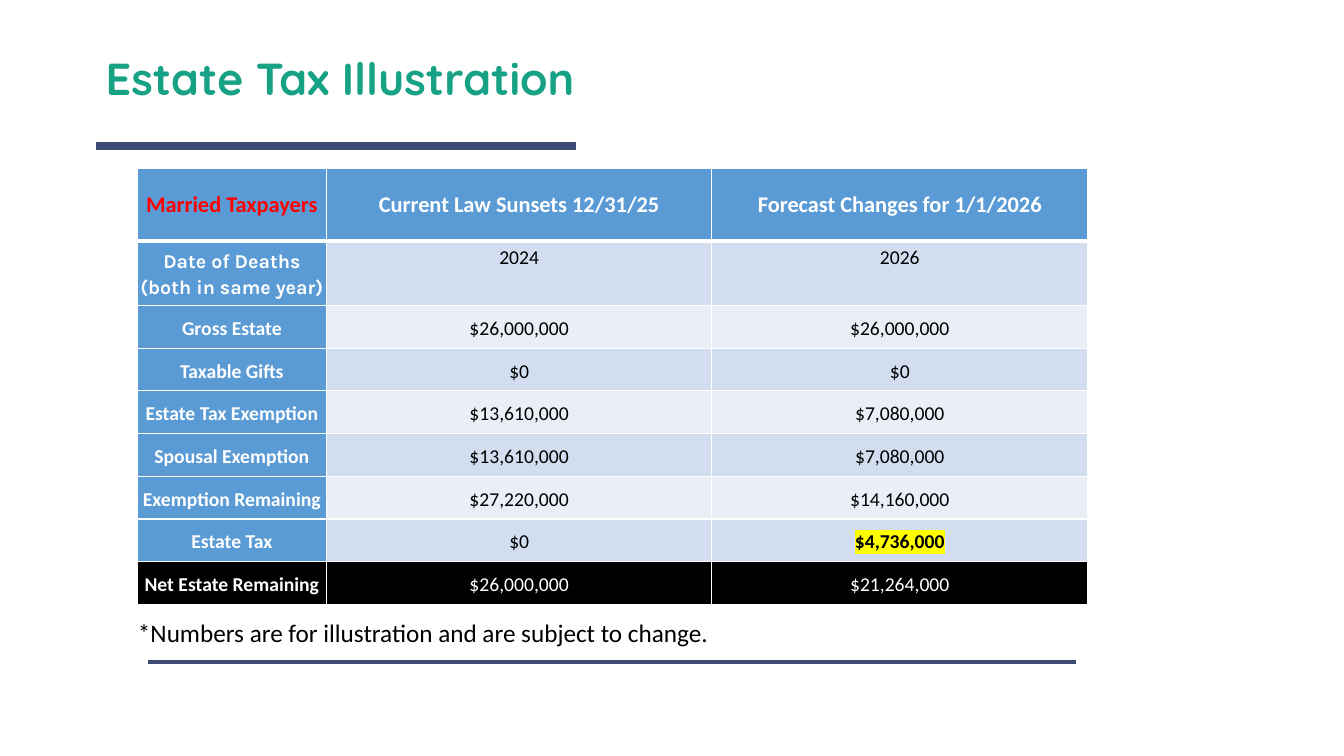
from lxml import etree
from pptx import Presentation
from pptx.dml.color import RGBColor
from pptx.enum.shapes import MSO_CONNECTOR
from pptx.enum.text import MSO_ANCHOR, PP_ALIGN
from pptx.oxml.ns import qn
from pptx.util import Inches, Pt

STRAIGHT = MSO_CONNECTOR.STRAIGHT
TOP, MIDDLE = MSO_ANCHOR.TOP, MSO_ANCHOR.MIDDLE
LEFT, CENTER = PP_ALIGN.LEFT, PP_ALIGN.CENTER

COLORS = {
    "title": "17A185", "rule": "3F4A75", "header": "5B9BD5", "red": "FF0000",
    "odd": "D2DEEF", "even": "EAEFF7", "black": "000000", "white": "FFFFFF",
    "yellow": "FFFF00",
}
HEADINGS = ["Married Taxpayers", "Current Law Sunsets 12/31/25",
            "Forecast Changes for 1/1/2026"]
ROWS = [
    ["Date of Deaths (both in same year)", "2024", "2026"],
    ["Gross Estate", "$26,000,000", "$26,000,000"],
    ["Taxable Gifts", "$0", "$0"],
    ["Estate Tax Exemption", "$13,610,000", "$7,080,000"],
    ["Spousal Exemption", "$13,610,000", "$7,080,000"],
    ["Exemption Remaining", "$27,220,000", "$14,160,000"],
    ["Estate Tax", "$0", "$4,736,000"],
    ["Net Estate Remaining", "$26,000,000", "$21,264,000"],
]
COL_WIDTHS = [1.88, 3.82, 3.73]
TABLE_HEIGHT, HEADER_HEIGHT, DEATHS_HEIGHT = 4.33, 0.72, 0.64


def rgb(name):
    """Return the named colour."""
    return RGBColor.from_string(COLORS[name])


def write(tf, text, size=14, font="Calibri", color="black", bold=False,
          align=LEFT, spacing=1.0, highlight=None):
    """Write one formatted paragraph into a text frame."""
    p = tf.paragraphs[0]
    p.alignment, p.line_spacing = align, spacing
    r = p.add_run()
    r.text = text
    r.font.size, r.font.bold = Pt(size), bold
    r.font.color.rgb = rgb(color)
    r.font.name = font
    if highlight:
        hl = etree.Element(qn("a:highlight"))
        etree.SubElement(hl, qn("a:srgbClr"), val=COLORS[highlight])
        r.font._element.find(qn("a:latin")).addprevious(hl)


def add_text(slide, text, x, y, w, h, anchor=TOP, **fmt):
    """Add a wrapping text box."""
    tf = slide.shapes.add_textbox(Inches(x), Inches(y), Inches(w), Inches(h)).text_frame
    tf.word_wrap, tf.vertical_anchor = True, anchor
    write(tf, text, **fmt)


def add_rule(slide, x1, x2, y, width):
    """Add a horizontal line without a shadow."""
    line = slide.shapes.add_connector(STRAIGHT, Inches(x1), Inches(y), Inches(x2), Inches(y))
    line.line.color.rgb, line.line.width = rgb("rule"), Pt(width)
    etree.SubElement(line._element.spPr, qn("a:effectLst"))


def set_borders(cell, **widths):
    """Give a cell white borders, with widths in points by side."""
    tc_pr = cell._tc.get_or_add_tcPr()
    for i, side in enumerate("LRTB"):
        ln = etree.Element(qn("a:ln" + side), w=str(Pt(widths.get(side, 1))))
        fill = etree.SubElement(ln, qn("a:solidFill"))
        etree.SubElement(fill, qn("a:srgbClr"), val=COLORS["white"])
        tc_pr.insert(i, ln)


def fill_cell(cell, text, fill, inset, anchor=MIDDLE, borders=None, **fmt):
    """Fill, frame and write one centred table cell."""
    cell.fill.solid()
    cell.fill.fore_color.rgb = rgb(fill)
    cell.vertical_anchor = anchor
    cell.margin_left = cell.margin_right = Inches(inset[0])
    cell.margin_top = cell.margin_bottom = Inches(inset[1])
    set_borders(cell, **(borders or {}))
    write(cell.text_frame, text, align=CENTER, **fmt)


def add_estate_table(slide, x, y):
    """Add the comparison of estate tax under both laws."""
    table = slide.shapes.add_table(
        len(ROWS) + 1, len(HEADINGS), Inches(x), Inches(y),
        Inches(sum(COL_WIDTHS)), Inches(TABLE_HEIGHT)).table
    for col, width in zip(table.columns, COL_WIDTHS):
        col.width = Inches(width)
    row_height = (TABLE_HEIGHT - HEADER_HEIGHT - DEATHS_HEIGHT) / (len(ROWS) - 1)
    heights = [HEADER_HEIGHT, DEATHS_HEIGHT] + [row_height] * (len(ROWS) - 1)
    for row, height in zip(table.rows, heights):
        row.height = Inches(height)

    for c, heading in enumerate(HEADINGS):
        fill_cell(table.cell(0, c), heading, "header", (0.05, 0.03), borders={"B": 3},
                  size=16, bold=True, color="white" if c else "red")
    for i, values in enumerate(ROWS, 1):
        first, last = i == 1, i == len(ROWS)
        band = "odd" if i % 2 else "even"
        for c, text in enumerate(values):
            label = c == 0
            tax_due = values[0] == "Estate Tax" and c == 2
            fill = "black" if last else "header" if label else band
            fill_cell(table.cell(i, c), text, fill, (0.01, 0.01),
                      anchor=TOP if first and not label else MIDDLE,
                      borders={"T": 3} if first else None,
                      font="Karla" if first and label else "Calibri",
                      color="white" if label or last else "black",
                      bold=label or tax_due, spacing=1.15,
                      highlight="yellow" if tax_due else None)


def main():
    """Build the slide and save it."""
    prs = Presentation()
    prs.slide_width, prs.slide_height = Inches(13.33), Inches(7.5)
    slide = prs.slides.add_slide(prs.slide_layouts[6])
    add_rule(slide, 0.95, 5.71, 1.45, 6)
    add_rule(slide, 1.47, 10.67, 6.57, 3)
    add_text(slide, "Estate Tax Illustration", 0.95, 0.4, 11.47, 0.8, anchor=MIDDLE,
             size=32, font="Quicksand", color="title", bold=True, spacing=0.9)
    add_estate_table(slide, 1.36, 1.67)
    add_text(slide, "*Numbers are for illustration and are subject to change.",
             1.27, 6.08, 7.07, 0.4, size=18)
    prs.save("out.pptx")


if __name__ == "__main__":
    main()
